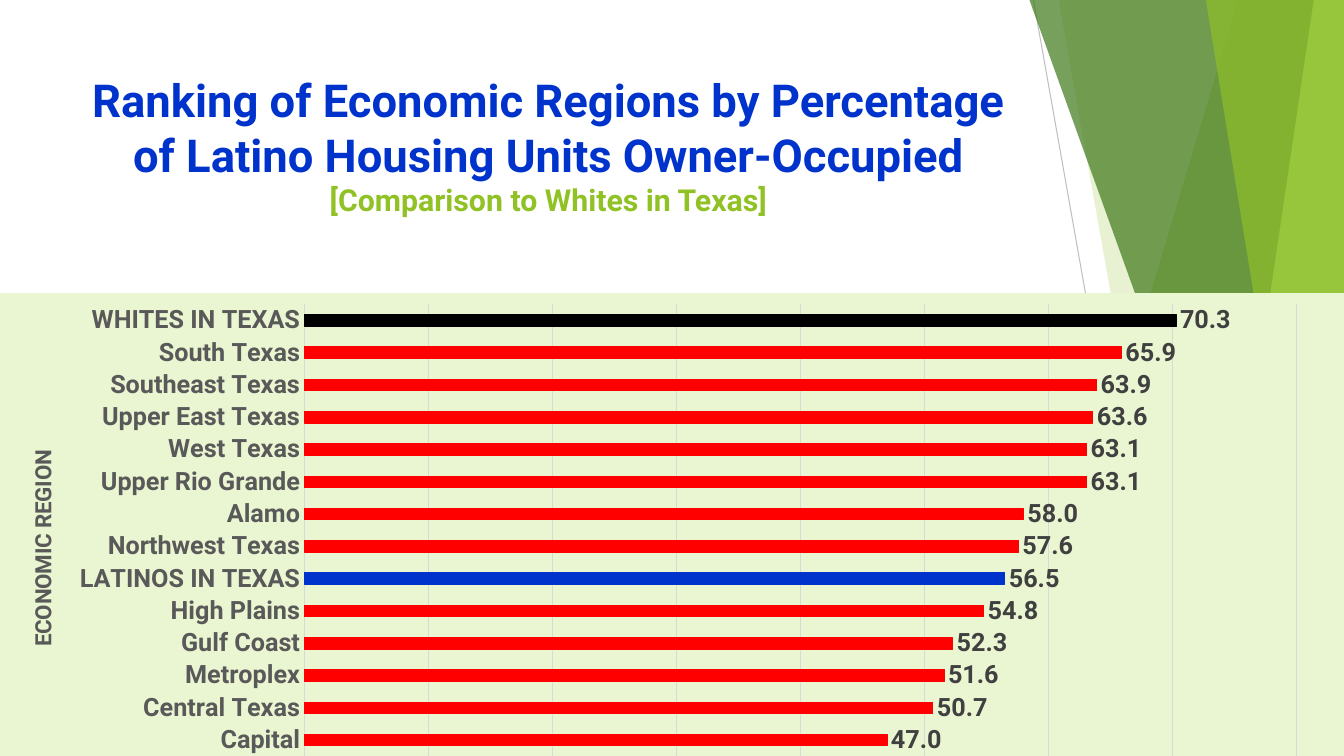
from dataclasses import dataclass

from lxml import etree
from pptx import Presentation
from pptx.chart.data import CategoryChartData
from pptx.dml.color import RGBColor
from pptx.enum.chart import XL_CHART_TYPE, XL_LABEL_POSITION, XL_TICK_LABEL_POSITION, XL_TICK_MARK
from pptx.enum.shapes import MSO_CONNECTOR
from pptx.enum.text import MSO_ANCHOR, PP_ALIGN
from pptx.oxml import parse_xml
from pptx.oxml.ns import nsdecls, qn
from pptx.util import Inches, Pt

BARS = XL_CHART_TYPE.BAR_CLUSTERED
OUT_END = XL_LABEL_POSITION.OUTSIDE_END
NO_TEXT = XL_TICK_LABEL_POSITION.NONE
NO_TICK = XL_TICK_MARK.NONE
LINE = MSO_CONNECTOR.STRAIGHT
TOP = MSO_ANCHOR.TOP
CENTER = PP_ALIGN.CENTER

WIDE, HIGH = Inches(13.33), Inches(7.5)


@dataclass(frozen=True)
class Theme:
    font: str = "Roboto"
    blue: str = "0033CC"
    green: str = "90C226"
    forest: str = "3F7819"
    lime: str = "C0E474"
    pale: str = "EAF6D1"
    red: str = "FF0000"
    black: str = "000000"
    text: str = "595959"
    value: str = "404040"
    grid: str = "D9D9D9"
    rule: str = "BFBFBF"
    head: float = 32.4
    sub: float = 21.6
    label: float = 18
    axis: float = 16
    base: float = 10
    thin: float = 0.75


@dataclass(frozen=True)
class Facet:
    """A full-height band: left edge at top and foot, as inches, up to the right side."""
    top: float
    foot: float
    color: str
    alpha: int


@dataclass(frozen=True)
class Region:
    name: str
    share: float
    color: str


THEME = Theme()

FACETS = [
    Facet(12.28, 10.04, THEME.green, 30),
    Facet(10.5, 11.83, THEME.green, 20),
    Facet(10.21, 12.91, THEME.forest, 70),
    Facet(13.03, 11.92, THEME.lime, 70),
    Facet(11.96, 13.18, THEME.green, 65),
]

REGIONS = [
    Region("Capital", 47.0, THEME.red),
    Region("Central Texas", 50.7, THEME.red),
    Region("Metroplex", 51.6, THEME.red),
    Region("Gulf Coast", 52.3, THEME.red),
    Region("High Plains", 54.8, THEME.red),
    Region("LATINOS IN TEXAS", 56.5, THEME.blue),
    Region("Northwest Texas", 57.6, THEME.red),
    Region("Alamo", 58.0, THEME.red),
    Region("Upper Rio Grande", 63.1, THEME.red),
    Region("West Texas", 63.1, THEME.red),
    Region("Upper East Texas", 63.6, THEME.red),
    Region("Southeast Texas", 63.9, THEME.red),
    Region("South Texas", 65.9, THEME.red),
    Region("WHITES IN TEXAS", 70.3, THEME.black),
]


def apply(item, form: dict) -> None:
    for key, value in form.items():
        setattr(item, key, value)


def style(font, size: float, color: str, bold: bool = True) -> None:
    apply(font, {"name": THEME.font, "size": Pt(size), "bold": bold})
    font.color.rgb = RGBColor.from_string(color)


def stroke(line, color: str) -> None:
    line.color.rgb = RGBColor.from_string(color)
    line.width = Pt(THEME.thin)


def layout(x: float, y: float, size: tuple = ()):
    """Manual chart layout, in shares of the chart's size."""
    parts = [("xMode", "edge"), ("yMode", "edge"), ("x", x), ("y", y), *zip("wh", size)]
    inner = '<c:layoutTarget val="inner"/>' if size else ""
    body = "".join(f'<c:{key} val="{val}"/>' for key, val in parts)
    return parse_xml(f'<c:layout {nsdecls("c")}><c:manualLayout>{inner}{body}'
                     "</c:manualLayout></c:layout>")


def put_layout(node, after: str, item) -> None:
    for old in node.findall(qn("c:layout")):
        node.remove(old)
    mark = node.find(qn(after)) if after else None
    if mark is None:
        node.insert(0, item)
    else:
        mark.addnext(item)


def draw_facet(slide, facet: Facet) -> None:
    pen = slide.shapes.build_freeform(Inches(facet.top), 0)
    pen.add_line_segments([(WIDE, 0), (WIDE, HIGH), (Inches(facet.foot), HIGH)], close=True)
    shape = pen.convert_to_shape()
    shape.shadow.inherit = False
    shape.fill.solid()
    shape.fill.fore_color.rgb = RGBColor.from_string(facet.color)
    shape.line.fill.background()
    tint = shape.fill._xPr.find(".//" + qn("a:srgbClr"))
    etree.SubElement(tint, qn("a:alpha"), val=str(facet.alpha * 1000))


def draw_rule(slide) -> None:
    rule = slide.shapes.add_connector(LINE, Inches(10.25), 0, Inches(11.58), HIGH)
    stroke(rule.line, THEME.rule)
    etree.SubElement(rule._element.spPr, qn("a:effectLst"))


def draw_title(slide) -> None:
    box = slide.shapes.add_textbox(Inches(0.74), Inches(0.67), Inches(9.4), Inches(1.44))
    frame = box.text_frame
    apply(frame, {"word_wrap": True, "vertical_anchor": TOP})
    para = frame.paragraphs[0]
    para.alignment = CENTER
    run = para.add_run()
    run.text = "Ranking of Economic Regions by Percentage of Latino Housing Units Owner-Occupied"
    style(run.font, THEME.head, THEME.blue)
    para.add_line_break()
    run = para.add_run()
    run.text = "[Comparison to Whites in Texas]"
    style(run.font, THEME.sub, THEME.green)


def draw_chart(slide) -> None:
    data = CategoryChartData(number_format="0.0")
    data.categories = [region.name for region in REGIONS]
    data.add_series("Series 1", [region.share for region in REGIONS])
    chart = slide.shapes.add_chart(BARS, 0, Inches(2.91), WIDE, Inches(5.5), data).chart
    apply(chart, {"has_legend": False, "has_title": False})
    style(chart.font, THEME.base, THEME.black, False)

    # Background and plot area
    paint = f'<a:solidFill><a:srgbClr val="{THEME.pale}"/></a:solidFill>'
    back = parse_xml(f'<c:spPr {nsdecls("c", "a")}>{paint}'
                     f'<a:ln w="{Pt(THEME.thin)}">{paint}</a:ln></c:spPr>')
    space = chart._chartSpace
    space.find(qn("c:chart")).addnext(back)
    area = space.find(".//" + qn("c:plotArea"))
    put_layout(area, "", layout(0.226, 0.019, (0.739, 0.817)))

    # Axes
    plain = {"major_tick_mark": NO_TICK, "minor_tick_mark": NO_TICK}
    names, scale = chart.category_axis, chart.value_axis
    apply(names, {**plain, "has_major_gridlines": False})
    apply(scale, {**plain, "has_major_gridlines": True, "tick_label_position": NO_TEXT,
                  "minimum_scale": 0, "maximum_scale": 80, "major_unit": 10})
    style(names.tick_labels.font, THEME.label, THEME.text)
    stroke(names.format.line, THEME.grid)
    stroke(scale.major_gridlines.format.line, THEME.grid)
    scale.format.line.fill.background()
    title = names.axis_title
    run = title.text_frame.paragraphs[0].add_run()
    run.text = "ECONOMIC REGION"
    style(run.font, THEME.axis, THEME.text)
    node = title._element
    node.find(".//" + qn("a:bodyPr")).set("rot", "-5400000")
    put_layout(node, "c:tx", layout(0.018, 0.275))

    # Bars and values
    plot = chart.plots[0]
    apply(plot, {"gap_width": 182, "vary_by_categories": False, "has_data_labels": True})
    apply(plot.data_labels, {"show_value": True, "position": OUT_END,
                             "number_format": "0.0", "number_format_is_linked": False})
    style(plot.data_labels.font, THEME.label, THEME.value)
    bars = plot.series[0]
    forms = [(bars.format, THEME.red)]
    forms += [(bars.points[row].format, region.color)
              for row, region in enumerate(REGIONS) if region.color != THEME.red]
    for form, color in forms:
        form.fill.solid()
        form.fill.fore_color.rgb = RGBColor.from_string(color)
        stroke(form.line, color)


def main() -> None:
    deck = Presentation()
    apply(deck, {"slide_width": WIDE, "slide_height": HIGH})
    slide = deck.slides.add_slide(deck.slide_layouts[6])
    draw_rule(slide)
    for facet in FACETS:
        draw_facet(slide, facet)
    draw_title(slide)
    draw_chart(slide)
    deck.save("out.pptx")


if __name__ == "__main__":
    main()
